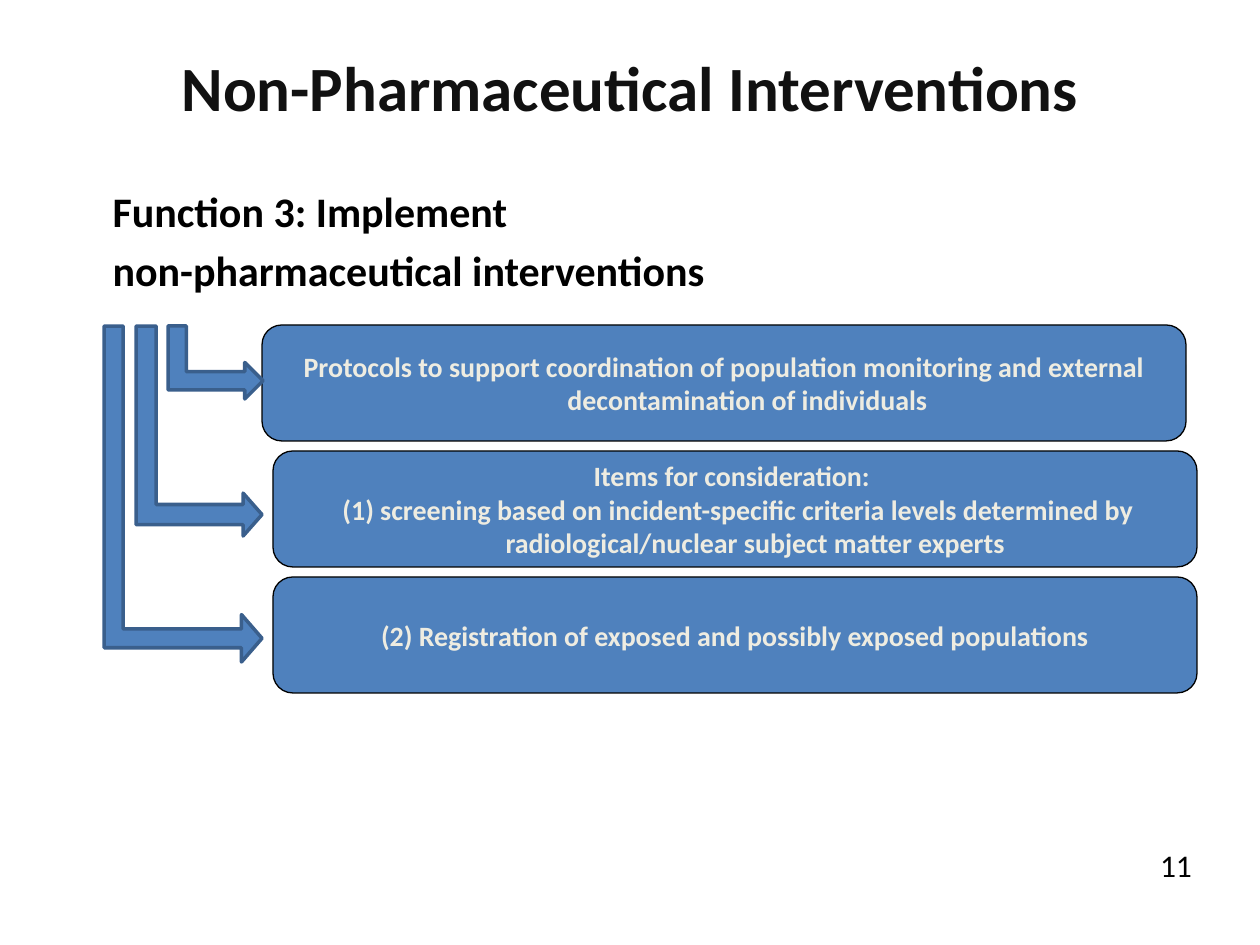
import pptx
import pptx.dml.color
import pptx.enum.shapes
import pptx.enum.text
import pptx.oxml
import pptx.oxml.ns
import pptx.util

EMU_PER_PX = 914400 / 126
SHAPES = pptx.enum.shapes.MSO_SHAPE
ALIGN = pptx.enum.text.PP_ALIGN
ANCHOR = pptx.enum.text.MSO_ANCHOR


def px(length):
    return pptx.util.Emu(round(length * EMU_PER_PX))


def color(value):
    return pptx.dml.color.RGBColor.from_string(value)


class SlideBuilder:
    font_name = "Calibri"
    blue = "4F81BD"
    arrow_edge = "3A5F8C"
    cream = "EEECE1"
    hanging = 47

    def __init__(self, page):
        self.page = page

    def place(self, box, left, top, width, height):
        box.left, box.top = px(left), px(top)
        box.width, box.height = px(width), px(height)

    def set_text(self, frame, lines, size, ink, bold=True, align=ALIGN.CENTER):
        frame.word_wrap = True
        frame.auto_size = pptx.enum.text.MSO_AUTO_SIZE.NONE
        frame.text = "\n".join(lines)
        for para in frame.paragraphs:
            para.alignment = align
            para.font.name = self.font_name
            para.font.size = pptx.util.Pt(size)
            para.font.bold = bold
            para.font.color.rgb = color(ink)
        return frame.paragraphs

    def indent(self, para, margin, first):
        properties = para._p.get_or_add_pPr()
        properties.set("marL", str(px(margin)))
        properties.set("indent", str(px(first)))
        return properties

    def title(self, text, *bounds):
        box = self.page.shapes.title
        self.place(box, *bounds)
        box.text_frame.vertical_anchor = ANCHOR.MIDDLE
        for para in self.set_text(box.text_frame, [text], 36, "111111"):
            para.line_spacing = pptx.util.Pt(30)

    def body(self, lines, *bounds):
        box = self.page.placeholders[1]
        self.place(box, *bounds)
        box.text_frame.vertical_anchor = ANCHOR.TOP
        for para in self.set_text(box.text_frame, lines, 24, "000000", align=ALIGN.LEFT):
            para.space_before = pptx.util.Pt(4.8)
            properties = self.indent(para, self.hanging, 0)
            properties.append(pptx.oxml.parse_xml(
                f"<a:buNone {pptx.oxml.ns.nsdecls('a')}/>"))
            properties.append(properties.find(pptx.oxml.ns.qn("a:defRPr")))

    def shape(self, kind, bounds, adjustments, edge, weight):
        box = self.page.shapes.add_shape(kind, *map(px, bounds))
        for index, value in enumerate(adjustments):
            box.adjustments[index] = value
        box.shadow.inherit = False
        box.fill.solid()
        box.fill.fore_color.rgb = color(self.blue)
        box.line.color.rgb = color(edge)
        box.line.width = pptx.util.Pt(weight)
        return box

    def panel(self, lines, left, top):
        box = self.shape(SHAPES.ROUNDED_RECTANGLE, (left, top, 924, 116), [0.17], "000000", 0.75)
        box.text_frame.vertical_anchor = ANCHOR.MIDDLE
        for para in self.set_text(box.text_frame, lines, 16, self.cream):
            self.indent(para, self.hanging, -self.hanging)

    def arrow(self, bounds, adjustments):
        box = self.shape(SHAPES.BENT_UP_ARROW, bounds, adjustments, self.arrow_edge, 2)
        box.rotation = 90

    def page_number(self, text, *bounds):
        box = self.page.shapes.add_textbox(*map(px, bounds))
        self.set_text(box.text_frame, [text], 18, "000000", bold=False)


def main():
    deck = pptx.Presentation()
    deck.slide_width, deck.slide_height = px(1260), px(945)
    builder = SlideBuilder(deck.slides.add_slide(deck.slide_layouts[1]))

    builder.title("Non-Pharmaceutical Interventions", 63, 38, 1134, 120)
    builder.body(["Function 3: Implement", "non-pharmaceutical interventions"], 53, 179, 1134, 126)

    panels = [
        (262, ["Protocols to support coordination of population monitoring and external "
               "decontamination of individuals"]),
        (273, ["Items for consideration: ",
               " (1) screening based on incident-specific criteria levels determined by "
               "radiological/nuclear subject matter experts "]),
        (273, ["(2) Registration of exposed and possibly exposed populations"]),
    ]
    for row, (left, lines) in enumerate(panels):
        builder.panel(lines, left, 325 + 126 * row)

    arrows = [
        ((94, 368, 210, 126), [0.16, 0.17, 0.15]),
        ((179, 315, 73, 95), [0.25, 0.25, 0.25]),
        ((15, 415, 336, 158), [0.12, 0.15, 0.13]),
    ]
    for bounds, adjustments in arrows:
        builder.arrow(bounds, adjustments)

    builder.page_number("11", 1134, 840, 84, 50)
    deck.save("out.pptx")


if __name__ == "__main__":
    main()
